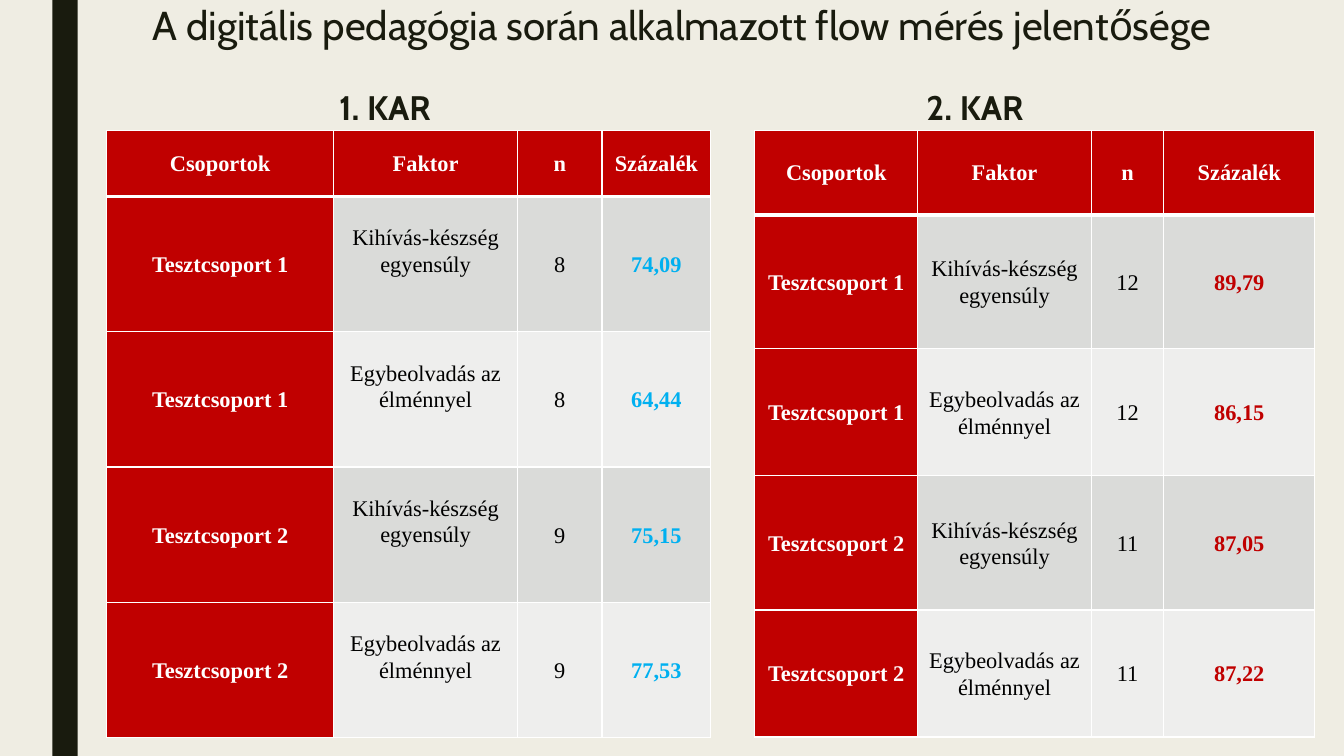
from lxml.etree import SubElement
from pptx import Presentation
from pptx.dml.color import RGBColor
from pptx.enum.shapes import MSO_SHAPE as Shape
from pptx.enum.text import MSO_ANCHOR as Anchor, MSO_AUTO_SIZE as AutoSize, PP_ALIGN as Align
from pptx.oxml.ns import qn
from pptx.util import Cm, Pt

DARK, RED, BLUE, WHITE, BLACK = "191B0E", "C00000", "00B0F0", "FFFFFF", "000000"
BANDS = ("DADBD9", "EEEEED")
HEADERS = ("Csoportok", "Faktor", "n", "Százalék")
GROUPS = ("Tesztcsoport 1", "Tesztcsoport 1", "Tesztcsoport 2", "Tesztcsoport 2")
FACTORS = ("Kihívás-készség egyensúly", "Egybeolvadás az élménnyel") * 2


def paint(fill, color):
    """Give a fill one solid colour."""
    fill.solid()
    fill.fore_color.rgb = RGBColor.from_string(color)


def write(paragraph, text, size=16, font="Times New Roman", color=BLACK,
          bold=False, align=Align.CENTER, spacing=1.07):
    """Write formatted text into a paragraph."""
    paragraph.alignment = align
    paragraph.line_spacing = spacing
    paragraph.space_before = paragraph.space_after = Pt(0)
    run = paragraph.add_run()
    run.text = text
    run.font.size = Pt(size)
    run.font.name = font
    run.font.bold = bold
    paint(run.font.fill, color)


def add_center_tabs(paragraph, positions):
    """Set centred tab stops on a paragraph."""
    tabs = SubElement(paragraph._p.get_or_add_pPr(), qn("a:tabLst"))
    for position in positions:
        SubElement(tabs, qn("a:tab"), pos=str(Cm(position)), algn="ctr")


def add_borders(cell, **widths):
    """Draw white cell borders with the given widths in points."""
    properties = cell._tc.get_or_add_tcPr()
    for side in "LRTB":
        line = SubElement(properties, qn(f"a:ln{side}"), w=str(Pt(widths.get(side, 1))))
        fill = SubElement(line, qn("a:solidFill"))
        SubElement(fill, qn("a:srgbClr"), val=WHITE)


def add_side_bar(slide, left, top, width, height):
    """Draw the dark vertical bar."""
    bar = slide.shapes.add_shape(Shape.RECTANGLE, Cm(left), Cm(top), Cm(width), Cm(height))
    bar.shadow.inherit = False
    paint(bar.fill, DARK)
    bar.line.fill.background()


def add_title(slide, left, top, width, height, caption_centers):
    """Fill the title with the heading and the two table captions."""
    title = slide.shapes.title
    title.left, title.top, title.width, title.height = map(Cm, (left, top, width, height))
    frame = title.text_frame
    frame.word_wrap = True
    frame.auto_size = AutoSize.NONE
    frame.vertical_anchor = Anchor.TOP
    frame.margin_left = frame.margin_right = Cm(0.25)
    frame.margin_top, frame.margin_bottom = Cm(0.15), Cm(0)
    style = dict(font="Cabin", color=DARK, spacing=0.89)
    write(frame.paragraphs[0], "A digitális pedagógia során alkalmazott flow mérés jelentősége",
          size=28.8, **style)
    captions = frame.add_paragraph()
    write(captions, "\t1. KAR\t2. KAR", size=24.3, bold=True, align=Align.LEFT, **style)
    captions.space_before = Pt(30)
    add_center_tabs(captions, [center - left - 0.25 for center in caption_centers])


def add_results(slide, left, top, widths, heights, counts, percents, accent, factor_lift=0):
    """Build one faculty's table of flow results."""
    rows = [HEADERS, *zip(GROUPS, FACTORS, counts, percents)]
    table = slide.shapes.add_table(len(rows), len(HEADERS), Cm(left), Cm(top),
                                   Cm(sum(widths)), Cm(sum(heights))).table
    for column, width in zip(table.columns, widths):
        column.width = Cm(width)
    for row, height in zip(table.rows, heights):
        row.height = Cm(height)
    for i, values in enumerate(rows):
        for j, value in enumerate(values):
            cell = table.cell(i, j)
            heading = i == 0 or j == 0
            cell.vertical_anchor = Anchor.MIDDLE
            cell.margin_left = cell.margin_right = Cm(0.18)
            cell.margin_top = Cm(0)
            cell.margin_bottom = Cm(factor_lift if j == 1 and i else 0)
            add_borders(cell, T=3 if i == 1 else 1, B=3 if i == 0 else 1)
            paint(cell.fill, RED if heading else BANDS[(i - 1) % 2])
            color = WHITE if heading else accent if j == 3 else BLACK
            write(cell.text_frame.paragraphs[0], value, color=color, bold=heading or j == 3)


def main():
    """Build and save the slide."""
    presentation = Presentation()
    presentation.slide_width, presentation.slide_height = Cm(33.87), Cm(19.05)
    slide = presentation.slides.add_slide(presentation.slide_layouts[5])
    paint(slide.background.fill, "EFEDE3")
    add_side_bar(slide, 1.32, 0, 0.64, 19.05)
    add_title(slide, 0.5, 0, 33.37, 2.9, caption_centers=(9.7, 24.57))
    add_results(slide, 19.02, 3.28, (4.11, 4.37, 1.83, 3.8), (2.13, 3.38, 3.2, 3.38, 3.2),
                ("12", "12", "11", "11"), ("89,79", "86,15", "87,05", "87,22"), RED)
    add_results(slide, 2.69, 3.28, (5.72, 4.63, 2.13, 2.74), (1.67, *[3.41] * 4),
                ("8", "8", "9", "9"), ("74,09", "64,44", "75,15", "77,53"), BLUE,
                factor_lift=0.68)
    presentation.save("out.pptx")


if __name__ == "__main__":
    main()
